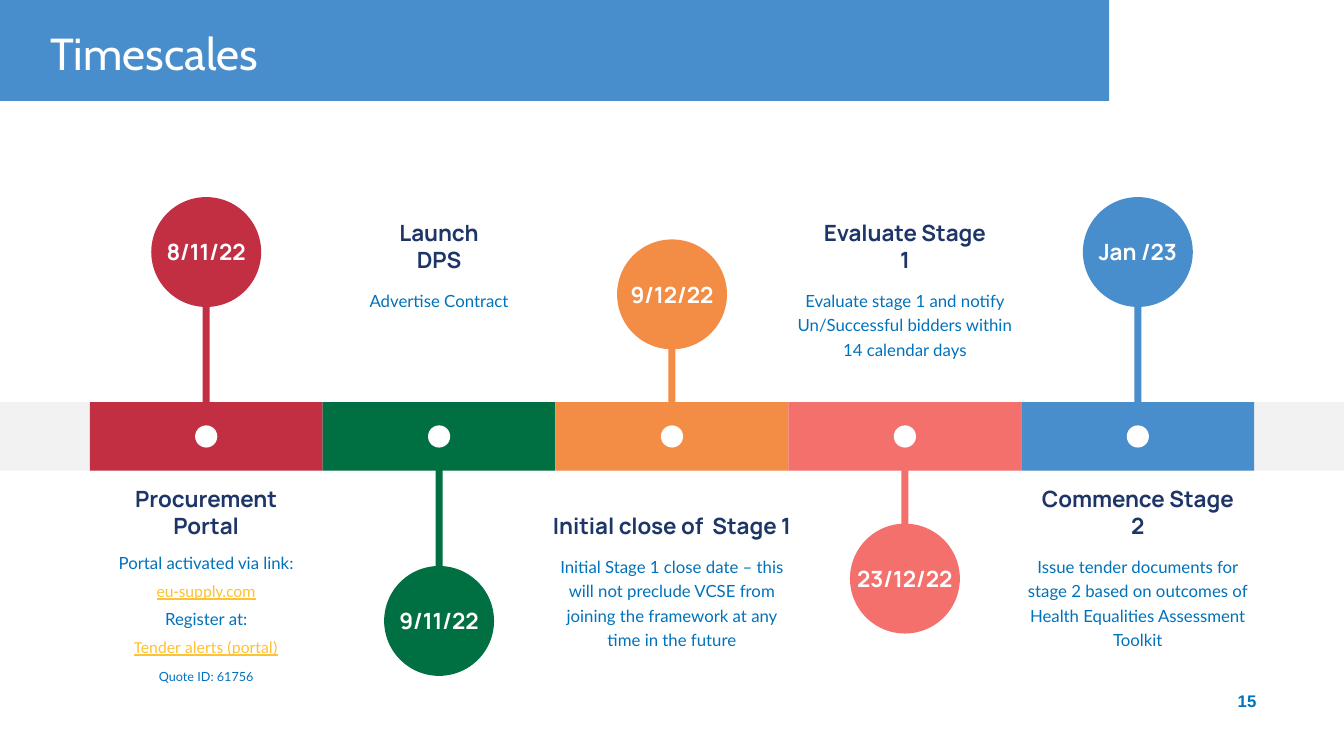
"""Build the Timescales slide with a five-stage procurement timeline."""
import math
from dataclasses import dataclass

import pptx
import pptx.dml.color
import pptx.enum.shapes
import pptx.enum.text
import pptx.util
from pptx.util import Inches

RGBColor = pptx.dml.color.RGBColor
Anchor = pptx.enum.text.MSO_ANCHOR
Align = pptx.enum.text.PP_ALIGN
Preset = pptx.enum.shapes.MSO_SHAPE

WHITE = RGBColor(0xFF, 0xFF, 0xFF)
GREY = RGBColor(0xF2, 0xF2, 0xF2)
RED = RGBColor(0xC2, 0x2F, 0x43)
GREEN = RGBColor(0x00, 0x6F, 0x42)
ORANGE = RGBColor(0xF3, 0x8C, 0x45)
CORAL = RGBColor(0xF3, 0x70, 0x6D)
BLUE = RGBColor(0x49, 0x8E, 0xCC)
NAVY = RGBColor(0x1D, 0x36, 0x67)
TEXT_BLUE = RGBColor(0x00, 0x72, 0xBB)
LINK_YELLOW = RGBColor(0xFE, 0xC2, 0x35)

SLIDE_WIDTH = 13.33
STAGE_WIDTH = 2.31
BAR_TOP = 3.99
BAR_HEIGHT = 0.68
BAR_MIDDLE = BAR_TOP + BAR_HEIGHT / 2
CIRCLE_SIZE = 1.09
DOT_SIZE = 0.22
STEM_WIDTH = 0.07
BODY_WIDTH = 2.44
HEADING_HEIGHT = 0.37


@dataclass
class Stage:
    """One stage of the timeline."""

    date: str
    heading: str
    heading_width: float
    lines: list
    color: RGBColor
    circle_middle: float
    body_top: float
    body_height: float


STAGES = [
    Stage("8/11/22", "Procurement Portal", 2.27,
          ["Portal activated via link:", "eu-supply.com", "Register at:",
           "Tender alerts (portal)", "Quote ID: 61756"], RED, 2.5, 5.41, 1.45),
    Stage("9/11/22", "Launch DPS", 1.44, ["Advertise Contract"], GREEN, 6.16, 2.81, 0.28),
    Stage("9/12/22", "Initial close of  Stage 1", 2.59,
          ["Initial Stage 1 close date – this will not preclude VCSE from "
           "joining the framework at any time in the future"], ORANGE, 2.92, 5.45, 1.06),
    Stage("23/12/22", "Evaluate Stage 1", 1.94,
          ["Evaluate stage 1 and notify Un/Successful bidders within "
           "14 calendar days"], CORAL, 5.74, 2.81, 0.81),
    Stage("Jan /23", "Commence Stage 2", 2.22,
          ["Issue tender documents for stage 2 based on outcomes of "
           "Health Equalities Assessment Toolkit"], BLUE, 2.5, 5.45, 1.06),
]
LINK_LINES = ("eu-supply.com", "Tender alerts (portal)")
SMALL_LINES = ("Quote ID: 61756",)


def paint(shape, color):
    """Give a shape a flat fill without line or shadow."""
    shape.fill.solid()
    shape.fill.fore_color.rgb = color
    shape.line.fill.background()
    shape.shadow.inherit = False


def format_runs(paragraph, name, size, color, bold=False, underline=False):
    """Apply one character format to every run of a paragraph."""
    for run in paragraph.runs:
        run.font.name = name
        run.font.size = pptx.util.Pt(size)
        run.font.color.rgb = color
        run.font.bold = bold
        run.font.underline = underline


def add_preset(slide, preset, left, top, width, height, color):
    """Add a flat preset shape."""
    shape = slide.shapes.add_shape(preset, Inches(left), Inches(top),
                                   Inches(width), Inches(height))
    paint(shape, color)
    return shape


def add_disc(slide, center, middle, size, color):
    """Add a circle around a centre point."""
    return add_preset(slide, Preset.OVAL, center - size / 2, middle - size / 2,
                      size, size, color)


def add_text(slide, left, top, width, height, text, anchor, alignment):
    """Add a wrapping text box with aligned paragraphs."""
    box = slide.shapes.add_textbox(Inches(left), Inches(top), Inches(width), Inches(height))
    frame = box.text_frame
    frame.text = text
    frame.word_wrap = True
    frame.vertical_anchor = anchor
    for paragraph in frame.paragraphs:
        paragraph.alignment = alignment
    return frame


def add_header(slide):
    """Add the blue header with a rounded lower right corner and its title."""
    angles = [math.radians(3 * step) for step in range(31)]
    curve = [(10.11 + 1.27 * math.cos(angle), 0.26 + 0.85 * math.sin(angle))
             for angle in angles]
    builder = slide.shapes.build_freeform(0, 0, scale=Inches(1))
    builder.add_line_segments([(11.38, 0)] + curve + [(0, 1.11)], close=True)
    banner = builder.convert_to_shape()
    paint(banner, BLUE)

    title = slide.shapes.title
    banner.element.addnext(title.element)
    title.left, title.top = Inches(0.4), Inches(0.05)
    title.width, title.height = Inches(10.21), Inches(1.02)
    title.text_frame.text = "Timescales"
    title.text_frame.vertical_anchor = Anchor.MIDDLE
    paragraph = title.text_frame.paragraphs[0]
    paragraph.alignment = Align.LEFT
    paragraph.line_spacing = 0.9
    format_runs(paragraph, "Cabin", 32, WHITE)


def add_marker(slide, stage, center):
    """Add the bar segment, stem, dot and dated circle of a stage."""
    add_preset(slide, Preset.RECTANGLE, center - STAGE_WIDTH / 2, BAR_TOP,
               STAGE_WIDTH, BAR_HEIGHT, stage.color)
    stem_top = min(stage.circle_middle, BAR_MIDDLE)
    stem_height = abs(stage.circle_middle - BAR_MIDDLE)
    add_preset(slide, Preset.RECTANGLE, center - STEM_WIDTH / 2, stem_top,
               STEM_WIDTH, stem_height, stage.color)
    add_disc(slide, center, BAR_MIDDLE, DOT_SIZE, WHITE)
    circle = add_disc(slide, center, stage.circle_middle, CIRCLE_SIZE, stage.color)
    frame = circle.text_frame
    frame.text = stage.date
    frame.word_wrap = False
    frame.vertical_anchor = Anchor.MIDDLE
    frame.paragraphs[0].alignment = Align.CENTER
    format_runs(frame.paragraphs[0], "Manrope", 16, WHITE, bold=True)


def add_description(slide, stage, center):
    """Add the heading and body text of a stage."""
    heading_bottom = 2.76 if stage.circle_middle > BAR_MIDDLE else 5.4
    heading = add_text(slide, center - stage.heading_width / 2,
                       heading_bottom - HEADING_HEIGHT, stage.heading_width,
                       HEADING_HEIGHT, stage.heading, Anchor.BOTTOM, Align.CENTER)
    format_runs(heading.paragraphs[0], "Manrope", 16, NAVY, bold=True)

    body = add_text(slide, center - BODY_WIDTH / 2, stage.body_top, BODY_WIDTH,
                    stage.body_height, "\n".join(stage.lines), Anchor.TOP, Align.CENTER)
    body.margin_left = body.margin_right = Inches(0.05)
    body.margin_top = body.margin_bottom = Inches(0.03)
    for index, paragraph in enumerate(body.paragraphs):
        paragraph.line_spacing = pptx.util.Pt(17.5)
        if index:
            paragraph.space_before = pptx.util.Pt(2.4)
        if paragraph.text in LINK_LINES:
            format_runs(paragraph, "Calibri", 12, LINK_YELLOW, underline=True)
        else:
            size = 9 if paragraph.text in SMALL_LINES else 12
            format_runs(paragraph, "Lato", size, TEXT_BLUE)


def main():
    """Build and save the slide."""
    presentation = pptx.Presentation()
    presentation.slide_width = Inches(SLIDE_WIDTH)
    presentation.slide_height = Inches(7.5)
    slide = presentation.slides.add_slide(presentation.slide_layouts[5])
    add_header(slide)
    number = add_text(slide, 9.56, 6.75, 3, 0.4, "15", Anchor.MIDDLE, Align.RIGHT)
    format_runs(number.paragraphs[0], "Arial", 12, TEXT_BLUE, bold=True)
    add_preset(slide, Preset.RECTANGLE, 0, BAR_TOP, SLIDE_WIDTH, BAR_HEIGHT, GREY)
    for index, stage in enumerate(STAGES):
        center = SLIDE_WIDTH / 2 + (index - 2) * STAGE_WIDTH
        add_marker(slide, stage, center)
        add_description(slide, stage, center)
    presentation.save("out.pptx")


if __name__ == "__main__":
    main()
